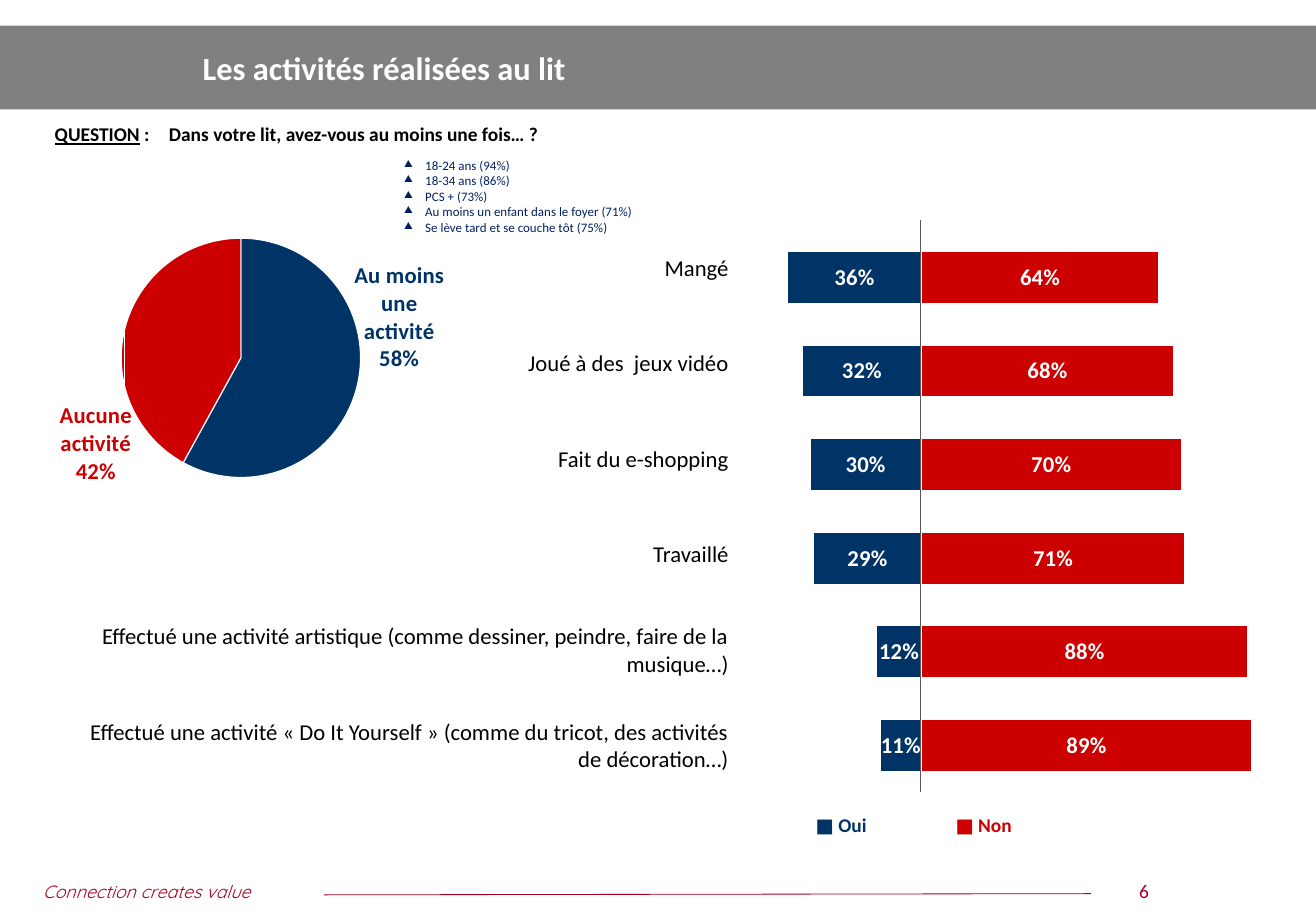
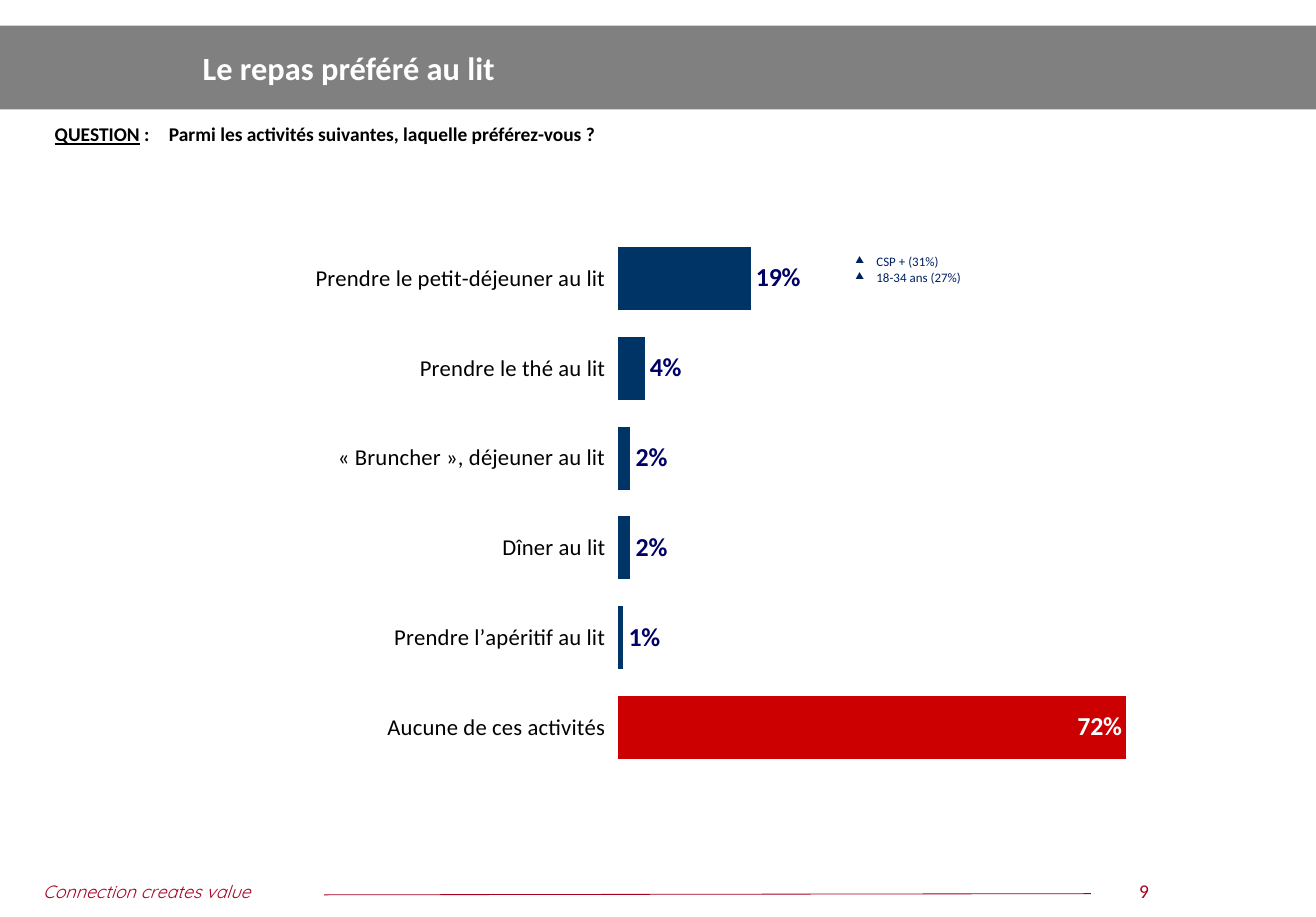
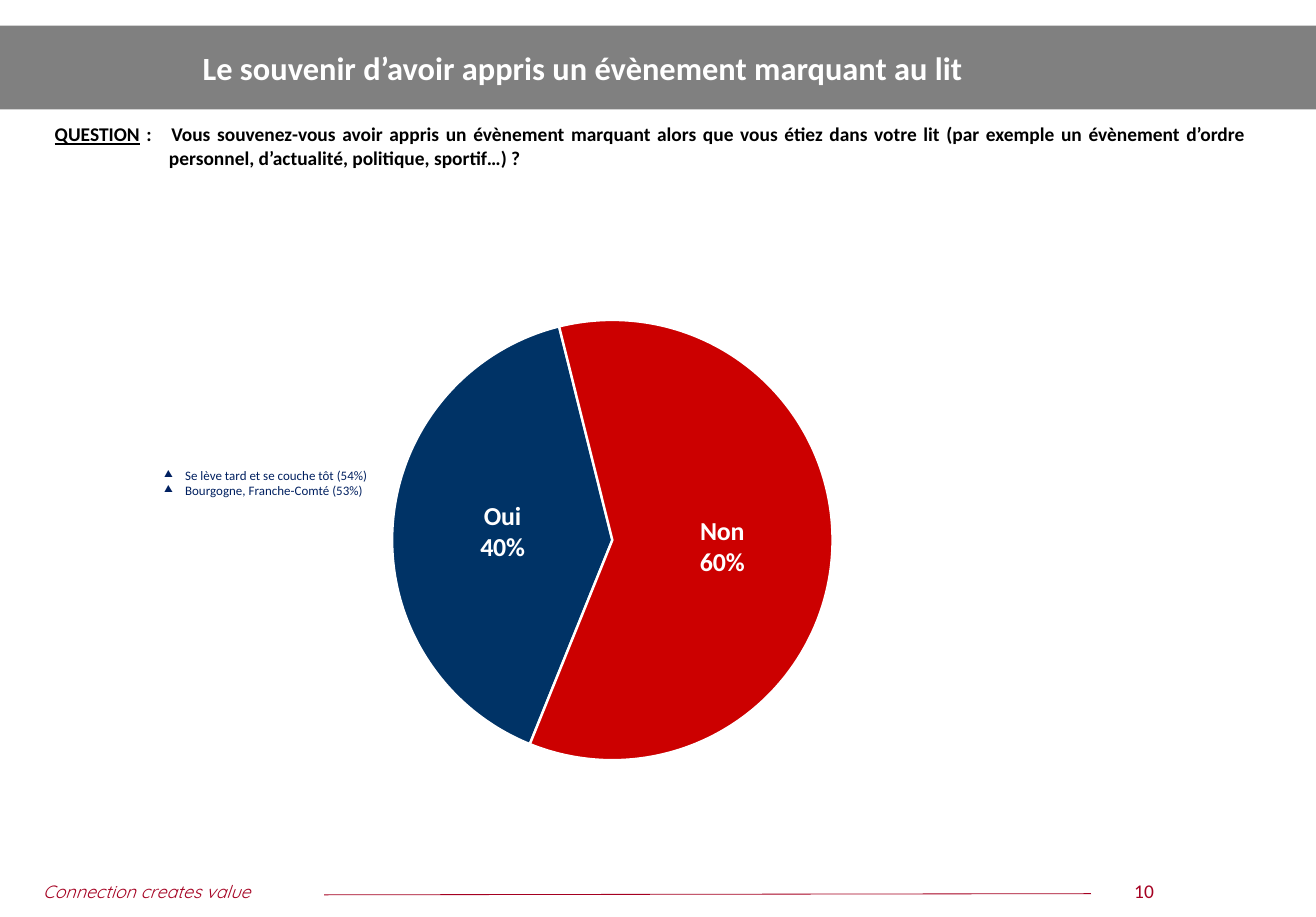
from dataclasses import dataclass, field
from typing import Any

from lxml import etree
from pptx import Presentation, util as u
from pptx.chart import data as chart_data
from pptx.dml.color import RGBColor
from pptx.enum import chart as charts, shapes, text
from pptx.oxml import ns

GREY = RGBColor(0x80, 0x80, 0x80)
WHITE = RGBColor(0xFF, 0xFF, 0xFF)
BLACK = RGBColor(0x00, 0x00, 0x00)
CRIMSON = RGBColor(0xA5, 0x00, 0x21)
NAVY = RGBColor(0x00, 0x33, 0x66)
RED = RGBColor(0xCC, 0x00, 0x00)
NOTE_BLUE = RGBColor(0x00, 0x20, 0x60)
LABEL_BLUE = RGBColor(0x00, 0x00, 0x66)
AXIS_GREY = RGBColor(0x59, 0x59, 0x59)

FONT = "Calibri"
WIDTH, HEIGHT = 11.29, 7.87
BAND_TOP, BAND_HEIGHT = 0.22, 0.72
PERCENT = "0%"
UNSIGNED_PERCENT = "#,##0%;[White]#,##0%"

Box = tuple[float, float, float, float]
Position = charts.XL_LABEL_POSITION


@dataclass(frozen=True)
class Series:
    values: list[float]
    color: RGBColor
    point_colors: dict[int, RGBColor] = field(default_factory=dict)


@dataclass(frozen=True)
class LabelStyle:
    size: float
    color: RGBColor
    position: Any
    number_format: str = PERCENT


@dataclass(frozen=True)
class ChartSpec:
    kind: Any
    box: Box
    plot_box: Box
    categories: list[str]
    series: list[Series]
    labels: LabelStyle
    outline: float = 0.75


@dataclass(frozen=True)
class SliceLabel:
    """Colour of a slice's label and its shift, as fractions of the chart."""
    color: RGBColor
    shift: tuple[float, float] = (0, 0)


def set_values(target: Any, **values: Any) -> None:
    for name, value in values.items():
        setattr(target, name, value)


def set_font(font: Any, size: float, color: RGBColor, **values: Any) -> None:
    set_values(font, **{"name": FONT, "size": u.Pt(size), **values})
    font.color.rgb = color


def inches(box: Box) -> list[int]:
    return [u.Inches(value) for value in box]


def add_text_box(slide: Any, box: Box, **values: Any) -> Any:
    frame = slide.shapes.add_textbox(*inches(box)).text_frame
    set_values(frame, word_wrap=True, **values)
    return frame


def add_run(paragraph: Any, words: str, size: float, color: RGBColor, **values: Any) -> None:
    run = paragraph.add_run()
    run.text = words
    set_font(run.font, size, color, **values)


def set_hanging_indent(paragraph: Any, width: float) -> Any:
    properties = paragraph._p.get_or_add_pPr()
    properties.set("marL", str(u.Inches(width)))
    properties.set("indent", str(-u.Inches(width)))
    return properties


def add_line(slide: Any, start: tuple[float, float], end: tuple[float, float],
             color: RGBColor) -> None:
    line = slide.shapes.add_connector(shapes.MSO_CONNECTOR.STRAIGHT, *inches(start + end))
    line.line.color.rgb = color
    line.line.width = u.Pt(0.5)
    etree.SubElement(line._element.spPr, ns.qn("a:effectLst"))


def add_frame(presentation: Any, number: int, title: str, question: str) -> Any:
    """Add a slide with the title band, the question and the footer."""
    slide = presentation.slides.add_slide(presentation.slide_layouts[6])
    band = slide.shapes.add_shape(shapes.MSO_SHAPE.RECTANGLE,
                                  *inches((0, BAND_TOP, WIDTH, BAND_HEIGHT)))
    band.shadow.inherit = False
    band.fill.solid()
    band.fill.fore_color.rgb = GREY
    band.line.fill.background()

    motto = add_text_box(slide, (0.27, 7.51, 2.98, 0.29))
    add_run(motto.paragraphs[0], "Connection creates value", 11, CRIMSON,
            name="Quicksand", italic=True)
    add_line(slide, (2.78, 7.68), (9.36, 7.67), CRIMSON)
    page = add_text_box(slide, (9.52, 7.5, 0.59, 0.3)).paragraphs[0]
    page.alignment = text.PP_ALIGN.CENTER
    add_run(page, str(number), 12, CRIMSON)

    heading = add_text_box(slide, (1.64, BAND_TOP, 9.48, BAND_HEIGHT),
                           vertical_anchor=text.MSO_ANCHOR.MIDDLE)
    add_run(heading.paragraphs[0], title, 20, WHITE, bold=True)

    frame = add_text_box(slide, (0.38, 1.01, 10.67, 0.28),
                         margin_left=u.Inches(0.09), margin_right=u.Inches(0.36),
                         margin_top=u.Inches(0.04), margin_bottom=u.Inches(0.04))
    paragraph = frame.paragraphs[0]
    paragraph.alignment = text.PP_ALIGN.JUSTIFY
    set_hanging_indent(paragraph, 0.98)
    add_run(paragraph, "QUESTION", 12, BLACK, bold=True, underline=True)
    add_run(paragraph, f" :\t{question}", 12, BLACK, bold=True)
    return slide


def add_highlights(slide: Any, box: Box, lines: list[str]) -> None:
    """List the groups that score above average, with triangle bullets."""
    frame = add_text_box(slide, box)
    for index, line in enumerate(lines):
        paragraph = frame.add_paragraph() if index else frame.paragraphs[0]
        properties = set_hanging_indent(paragraph, 0.18)
        etree.SubElement(properties, ns.qn("a:buSzPct")).set("val", "75000")
        etree.SubElement(properties, ns.qn("a:buChar")).set("char", "▲")
        add_run(paragraph, line, 8, NOTE_BLUE)


def make_no_fill() -> Any:
    properties = etree.Element(ns.qn("c:spPr"))
    etree.SubElement(properties, ns.qn("a:noFill"))
    line = etree.SubElement(properties, ns.qn("a:ln"))
    etree.SubElement(line, ns.qn("a:noFill"))
    return properties


def make_layout(**settings: Any) -> Any:
    layout = etree.Element(ns.qn("c:layout"))
    manual = etree.SubElement(layout, ns.qn("c:manualLayout"))
    for name, value in settings.items():
        etree.SubElement(manual, ns.qn(f"c:{name}")).set("val", str(value))
    return layout


def place_plot(chart: Any, box: Box) -> None:
    """Fix the inner plot area, as fractions of the chart, and clear the backgrounds."""
    chart_element = chart.element.find(ns.qn("c:chart"))
    chart_element.addnext(make_no_fill())
    plot_area = chart_element.find(ns.qn("c:plotArea"))
    for old in plot_area.findall(ns.qn("c:layout")):
        plot_area.remove(old)
    plot_area.insert(0, make_layout(layoutTarget="inner", xMode="edge", yMode="edge",
                                    **dict(zip("xywh", box))))
    plot_area.append(make_no_fill())


def paint(target: Any, color: RGBColor, outline: float) -> None:
    target.format.fill.solid()
    target.format.fill.fore_color.rgb = color
    target.format.line.color.rgb = WHITE
    target.format.line.width = u.Pt(outline)


def add_chart(slide: Any, design: ChartSpec) -> Any:
    data = chart_data.CategoryChartData(number_format=design.labels.number_format)
    data.categories = design.categories
    for index, series in enumerate(design.series, 1):
        data.add_series(f"Series {index}", series.values)
    chart = slide.shapes.add_chart(design.kind, *inches(design.box), data).chart
    set_values(chart, has_title=False, has_legend=False)
    set_font(chart.font, 14, BLACK)
    place_plot(chart, design.plot_box)
    plot = chart.plots[0]
    plot.vary_by_categories = False
    style = design.labels
    for drawn, series in zip(plot.series, design.series):
        paint(drawn, series.color, design.outline)
        for index, color in series.point_colors.items():
            paint(drawn.points[index], color, design.outline)
        labels = drawn.data_labels
        set_values(labels, show_value=True, position=style.position,
                   number_format=style.number_format, number_format_is_linked=False)
        set_font(labels.font, style.size, style.color, bold=True)
    return chart


def set_point_label(chart: Any, index: int, size: float, color: RGBColor, position: Any) -> None:
    label = chart.plots[0].series[0].points[index].data_label
    set_font(label.font, size, color, bold=True)
    label.position = position


def finish_pie(chart: Any, first_angle: int, style: LabelStyle,
               slices: list[SliceLabel]) -> None:
    """Turn the pie and label its slices: the first by value, the others by percentage."""
    for index, item in enumerate(slices):
        set_point_label(chart, index, style.size, item.color, style.position)
    pie = chart.plots[0]._element
    for old in pie.findall(ns.qn("c:firstSliceAng")):
        pie.remove(old)
    etree.SubElement(pie, ns.qn("c:firstSliceAng")).set("val", str(first_angle))
    for labels in pie.iter(ns.qn("c:dLbls"), ns.qn("c:dLbl")):
        index = labels.find(ns.qn("c:idx"))
        by_value = index is not None and index.get("val") == "0"
        flags = {"showVal": by_value, "showCatName": True, "showPercent": not by_value}
        for name, shown in flags.items():
            labels.find(ns.qn(f"c:{name}")).set("val", str(int(shown)))
        separator = etree.Element(ns.qn("c:separator"))
        separator.text = "\n"
        labels.find(ns.qn("c:showBubbleSize")).addnext(separator)
        if index is not None:
            x, y = slices[int(index.get("val"))].shift
            if x or y:
                index.addnext(make_layout(x=x, y=y))


def finish_bars(chart: Any, gap: int, minimum: float, maximum: float) -> None:
    chart.plots[0].gap_width = gap
    chart.category_axis.reverse_order = True
    set_values(chart.value_axis, visible=False, has_major_gridlines=False,
               minimum_scale=minimum, maximum_scale=maximum)


def add_activity_names(slide: Any, names: list[str]) -> None:
    row_height = 0.82
    table = slide.shapes.add_table(
        len(names), 1, *inches((0.44, 1.89, 5.85, row_height * len(names)))).table
    set_values(table, first_row=False, horz_banding=False)
    for row, name in enumerate(names):
        table.rows[row].height = u.Inches(row_height)
        cell = table.cell(row, 0)
        cell.fill.background()
        set_values(cell, vertical_anchor=text.MSO_ANCHOR.MIDDLE,
                   margin_left=u.Inches(0.19), margin_right=u.Inches(0.04),
                   margin_top=u.Inches(0.01), margin_bottom=0)
        paragraph = cell.text_frame.paragraphs[0]
        paragraph.alignment = text.PP_ALIGN.RIGHT
        add_run(paragraph, name, 14, BLACK)


def add_answer_key(slide: Any) -> None:
    paragraph = add_text_box(slide, (6.9, 6.93, 2.2, 0.3)).paragraphs[0]
    tabs = etree.SubElement(paragraph._p.get_or_add_pPr(), ns.qn("a:tabLst"))
    tab = etree.SubElement(tabs, ns.qn("a:tab"))
    tab.set("pos", str(u.Inches(1.2)))
    tab.set("algn", "l")
    add_run(paragraph, "■ Oui\t", 12, NAVY, bold=True)
    add_run(paragraph, "■ Non", 12, RED, bold=True)


def build_activities(presentation: Any) -> None:
    slide = add_frame(presentation, 6, "Les activités réalisées au lit",
                      "Dans votre lit, avez-vous au moins une fois… ?")
    add_activity_names(slide, [
        "Mangé",
        "Joué à des  jeux vidéo",
        "Fait du e-shopping",
        "Travaillé",
        "Effectué une activité artistique (comme dessiner, peindre, faire de la musique…)",
        "Effectué une activité «\u00a0Do It Yourself\u00a0» "
        "(comme du tricot, des activités de décoration…)",
    ])
    add_answer_key(slide)
    yes_shares = [0.36, 0.32, 0.3, 0.29, 0.12, 0.11]
    bars = add_chart(slide, ChartSpec(
        charts.XL_CHART_TYPE.BAR_STACKED, (4.72, 1.93, 6.37, 4.87), (0, 0.01, 1, 0.99),
        [str(number) for number in range(1, len(yes_shares) + 1)],
        [Series([-share for share in yes_shares], NAVY),
         Series([round(1 - share, 2) for share in yes_shares], RED)],
        LabelStyle(14, WHITE, Position.CENTER, UNSIGNED_PERCENT)))
    bars.plots[0].overlap = 100
    bars.category_axis.visible = False
    finish_bars(bars, 80, -1, 1)
    add_line(slide, (7.9, 1.89), (7.9, 6.8), AXIS_GREY)

    style = LabelStyle(14, BLACK, Position.OUTSIDE_END)
    pie = add_chart(slide, ChartSpec(
        charts.XL_CHART_TYPE.PIE, (0.25, 1.54, 3.95, 3.33), (0.2, 0.15, 0.52, 0.62),
        ["Au moins une activité", "Aucune activité"],
        [Series([0.58, 0.42], NAVY, {0: NAVY, 1: RED})], style))
    finish_pie(pie, 0, style, [SliceLabel(NAVY, (-0.02, -0.33)), SliceLabel(RED, (0.03, 0.41))])
    add_highlights(slide, (3.37, 1.3, 2.53, 0.77), [
        "18-24 ans (94%)", "18-34 ans (86%)", "PCS + (73%)",
        "Au moins un enfant dans le foyer (71%)", "Se lève tard et se couche tôt (75%)"])


def build_meals(presentation: Any) -> None:
    slide = add_frame(presentation, 9, "Le repas préféré au lit",
                      "Parmi les activités suivantes, laquelle préférez-vous ?")
    bars = add_chart(slide, ChartSpec(
        charts.XL_CHART_TYPE.BAR_CLUSTERED, (0.81, 1.91, 9.34, 4.72), (0.48, 0.02, 0.52, 0.98),
        ["Prendre le petit-déjeuner au lit", "Prendre le thé au lit",
         "«\u00a0Bruncher\u00a0», déjeuner au lit", "Dîner au lit",
         "Prendre l’apéritif au lit", "Aucune de ces activités"],
        [Series([0.19, 0.04, 0.02, 0.02, 0.01, 0.72], NAVY, {5: RED})],
        LabelStyle(16, LABEL_BLUE, Position.OUTSIDE_END)))
    set_point_label(bars, 5, 16, WHITE, Position.INSIDE_END)
    finish_bars(bars, 40, 0, 0.8)
    bars.category_axis.format.line.fill.background()
    add_highlights(slide, (7.24, 2.13, 2.19, 0.37), ["CSP + (31%)", "18-34 ans (27%)"])


def build_memory(presentation: Any) -> None:
    slide = add_frame(
        presentation, 10, "Le souvenir d’avoir appris un évènement marquant au lit",
        "Vous souvenez-vous avoir appris un évènement marquant alors que vous étiez dans "
        "votre lit (par exemple un évènement d’ordre personnel, d’actualité, politique, "
        "sportif…) ?")
    style = LabelStyle(16, WHITE, Position.CENTER)
    pie = add_chart(slide, ChartSpec(
        charts.XL_CHART_TYPE.PIE, (0.99, 1.9, 9.37, 5.64), (0.25, 0.15, 0.41, 0.67),
        ["Oui", "Non"], [Series([0.4, 0.6], NAVY, {0: NAVY, 1: RED})], style, outline=1.5))
    finish_pie(pie, 202, style, [SliceLabel(WHITE), SliceLabel(WHITE)])
    add_highlights(slide, (1.31, 3.96, 2.19, 0.37), [
        "Se lève tard et se couche tôt (54%)", "Bourgogne, Franche-Comté (53%)"])


def main() -> None:
    presentation = Presentation()
    set_values(presentation, slide_width=u.Inches(WIDTH), slide_height=u.Inches(HEIGHT))
    for build in (build_activities, build_meals, build_memory):
        build(presentation)
    presentation.save("out.pptx")


if __name__ == "__main__":
    main()
